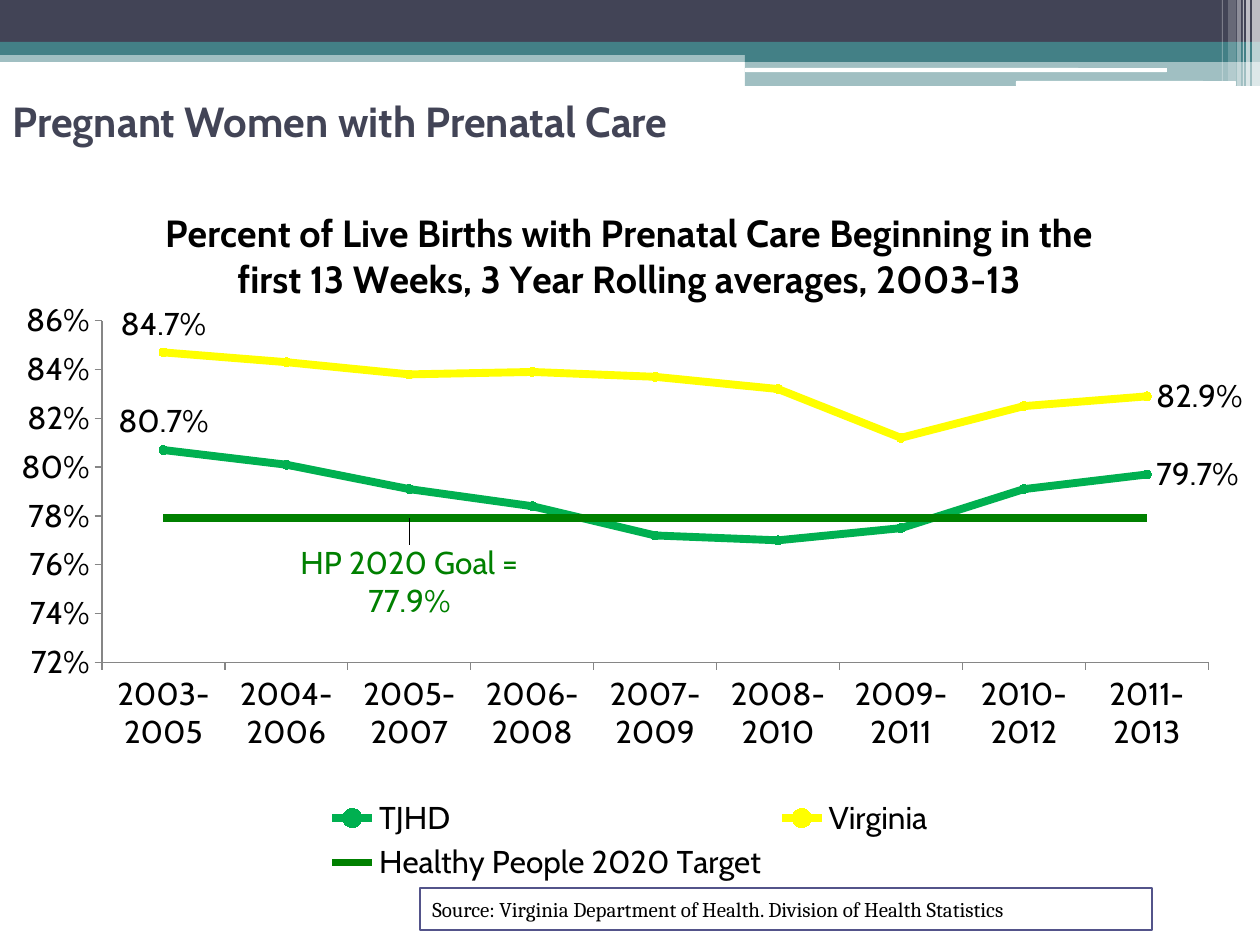
from lxml import etree
from pptx import Presentation
from pptx.chart.data import CategoryChartData
from pptx.dml.color import RGBColor
from pptx.enum.chart import (XL_CHART_TYPE as ChartType, XL_LABEL_POSITION as LabelPos,
                             XL_LEGEND_POSITION as LegendPos, XL_MARKER_STYLE as Marker,
                             XL_TICK_MARK as Tick)
from pptx.enum.shapes import MSO_SHAPE as Shape
from pptx.enum.text import MSO_ANCHOR as Anchor, PP_ALIGN as Align
from pptx.oxml import parse_xml
from pptx.oxml.ns import nsdecls, qn
from pptx.util import Emu, Pt

PX = 914400 / 126
SLATE, TEAL, WHITE, BLACK = "424456", "438086", "FFFFFF", "000000"
HEADING_FONT, SOURCE_FONT = "Cabin", "Cambria"


def px(n):
    return Emu(round(n * PX))


def rgb(value):
    return RGBColor.from_string(value)


def style(font, size, color, name=HEADING_FONT, bold=False):
    font.size, font.name, font.bold = Pt(size), name, bold
    font.color.rgb = rgb(color)


def add_bar(slide, box, color, alpha=100, kind=Shape.RECTANGLE):
    bar = slide.shapes.add_shape(kind, *map(px, box))
    bar.shadow.inherit = False
    bar.fill.solid()
    bar.fill.fore_color.rgb = rgb(color)
    bar.line.fill.background()
    if alpha < 100:
        fill_color = bar.fill._xPr.find(".//" + qn("a:srgbClr"))
        etree.SubElement(fill_color, qn("a:alpha")).set("val", str(alpha * 1000))
    return bar


def add_banner(slide, x, y, w):
    # Full-width bands and the step at the right
    step = x + 745
    for left, top, height, color, alpha in (
            (x, 50, 12, TEAL, 50), (x, 0, 42, SLATE, 100), (x, 42, 13, TEAL, 100),
            (step, 49, 13, TEAL, 100), (step, 61, 25, TEAL, 50)):
        add_bar(slide, (left, y + top, x + w - left, height), color, alpha)
    # White rules
    for left, top, width, height in ((745, 68, 422, 4), (1016, 81, 220, 5)):
        add_bar(slide, (x + left, y + top, width, height), WHITE,
                kind=Shape.ROUNDED_RECTANGLE)
    # Translucent stripes, measured from the right edge
    for inset, width, height, alpha in (
            (8, 8, 86, 65), (14, 4, 86, 65), (17, 1, 86, 60),
            (23, 4, 86, 40), (32, 8, 81, 20), (38, 1, 81, 30)):
        add_bar(slide, (x + w - inset, y, width, height), WHITE, alpha)


def add_title(slide, x, y, w, h):
    title = slide.shapes.title
    title.left, title.top, title.width, title.height = map(px, (x, y, w, h))
    frame = title.text_frame
    frame.vertical_anchor = Anchor.MIDDLE
    heading = frame.paragraphs[0]
    heading.alignment = Align.LEFT
    run = heading.add_run()
    run.text = "Pregnant Women with Prenatal Care"
    style(run.font, 24, SLATE, bold=True)


def manual_layout(target="", **values):
    inner = f'<c:layoutTarget val="{target}"/>' if target else ""
    if target:
        inner += '<c:xMode val="edge"/><c:yMode val="edge"/>'
    inner += "".join(f'<c:{key} val="{value}"/>' for key, value in values.items())
    return parse_xml(f'<c:layout {nsdecls("c")}><c:manualLayout>{inner}'
                     '</c:manualLayout></c:layout>')


def format_axis(axis):
    axis.has_major_gridlines = False
    axis.major_tick_mark = Tick.OUTSIDE
    axis.format.line.color.rgb = rgb("868686")
    style(axis.tick_labels.font, 18, BLACK)


def add_care_chart(slide, x, y, w, h):
    tjhd = (0.807, 0.801, 0.791, 0.784, 0.772, 0.770, 0.775, 0.791, 0.797)
    virginia = (0.847, 0.843, 0.838, 0.839, 0.837, 0.832, 0.812, 0.825, 0.829)
    data = CategoryChartData(number_format="0.0%")
    data.categories = [f"{year}-{year + 2}" for year in range(2003, 2012)]
    data.add_series("TJHD", tjhd)
    data.add_series("Virginia", virginia)
    data.add_series("Healthy People 2020 Target", [0.779] * len(tjhd))
    chart = slide.shapes.add_chart(ChartType.LINE_MARKERS, *map(px, (x, y, w, h)), data).chart
    style(chart.font, 18, BLACK)

    # Title, legend and plot position
    chart.has_title = True
    run = chart.chart_title.text_frame.paragraphs[0].add_run()
    run.text = ("Percent of Live Births with Prenatal Care Beginning in the "
                "first 13 Weeks, 3 Year Rolling averages, 2003-13")
    style(run.font, 21.6, BLACK, bold=True)
    chart.chart_title.include_in_layout = False
    chart.has_legend = True
    chart.legend.position = LegendPos.BOTTOM
    chart.legend.include_in_layout = False
    style(chart.legend.font, 18, BLACK)
    plot_area = chart._chartSpace.chart.plotArea
    for old in plot_area.findall(qn("c:layout")):
        plot_area.remove(old)
    plot_area.insert(0, manual_layout("inner", x=0.081, y=0.2, w=0.878, h=0.482))

    # Axes
    format_axis(chart.category_axis)
    percent = chart.value_axis
    format_axis(percent)
    percent.minimum_scale, percent.maximum_scale, percent.major_unit = 0.72, 0.86, 0.02
    percent.tick_labels.number_format = "0%"
    percent.tick_labels.number_format_is_linked = False

    # Lines, markers and end labels
    for series, color in zip(chart.plots[0].series, ("00B050", "FFFF00", "008000")):
        series.smooth = False
        series.format.line.color.rgb = rgb(color)
        series.format.line.width = Pt(4.5)
        series.data_labels.show_value = False
        if series.name.startswith("Healthy"):
            series.marker.style = Marker.NONE
            add_goal_label(series.points[2].data_label, color)
            continue
        series.marker.style, series.marker.size = Marker.CIRCLE, 5
        series.marker.format.fill.solid()
        series.marker.format.fill.fore_color.rgb = rgb(color)
        series.marker.format.line.color.rgb = rgb(color)
        for index, place in ((0, LabelPos.ABOVE), (len(tjhd) - 1, LabelPos.RIGHT)):
            label = series.points[index].data_label
            style(label.font, 18, BLACK)
            label.position = place


def add_goal_label(label, color):
    run = label.text_frame.paragraphs[0].add_run()
    run.text = "HP 2020 Goal = 77.9%"
    style(run.font, 18, color)
    label.position = LabelPos.BELOW
    element = label._dLbl
    for old in element.findall(qn("c:layout")):
        element.remove(old)
    element.insert(1, manual_layout(x=0, y=0.03))


def add_source(slide, x, y, w, h):
    source = add_bar(slide, (x, y, w, h), WHITE)
    source.line.color.rgb = rgb("53548A")
    source.line.width = Pt(0.75)
    frame = source.text_frame
    frame.word_wrap = True
    frame.vertical_anchor = Anchor.MIDDLE
    credit = frame.paragraphs[0]
    credit.alignment = Align.LEFT
    run = credit.add_run()
    run.text = "Source: Virginia Department of Health. Division of Health Statistics"
    style(run.font, 12, BLACK, SOURCE_FONT)


def main():
    deck = Presentation()
    deck.slide_width, deck.slide_height = px(1260), px(945)
    slide = deck.slides.add_slide(deck.slide_layouts[5])
    add_banner(slide, 0, 0, 1260)
    add_title(slide, 0, 63, 1050, 116)
    add_care_chart(slide, 0, 179, 1260, 709)
    add_source(slide, 420, 888, 732, 42)
    deck.save("out.pptx")


if __name__ == "__main__":
    main()
